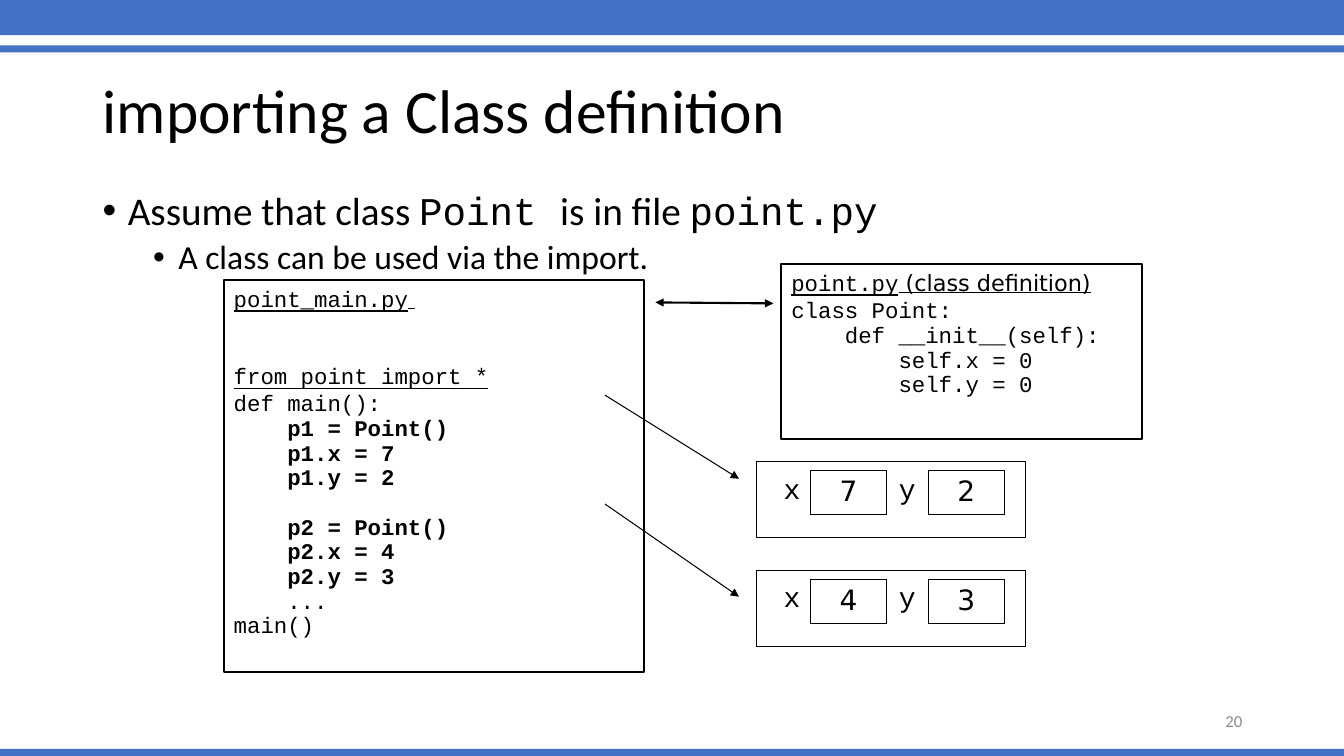
from pptx import Presentation
from pptx.dml.color import RGBColor
from pptx.enum.shapes import MSO_CONNECTOR, MSO_SHAPE
from pptx.enum.text import MSO_ANCHOR, MSO_AUTO_SIZE, PP_ALIGN
from pptx.oxml.ns import qn
from pptx.util import Emu, Pt
from lxml import etree

PX = 9144
TITLE_ONLY = 5
RECTANGLE = MSO_SHAPE.RECTANGLE
STRAIGHT = MSO_CONNECTOR.STRAIGHT
TOP, MIDDLE = MSO_ANCHOR.TOP, MSO_ANCHOR.MIDDLE
NO_AUTOFIT = MSO_AUTO_SIZE.NONE
LEFT, CENTER, RIGHT = PP_ALIGN.LEFT, PP_ALIGN.CENTER, PP_ALIGN.RIGHT

BLUE = RGBColor(0x44, 0x72, 0xC4)
BLACK = RGBColor(0, 0, 0)
GRAY = RGBColor(0x8C, 0x8C, 0x8C)

SANS, MONO, WIDE = "Calibri", "Courier New", "DejaVu Sans"
CODE_SIZE = 16
CODE_PITCH = 17.6

MAIN_CODE = [
    "def main():",
    "    p1 = Point()",
    "    p1.x = 7",
    "    p1.y = 2",
    "    p2 = Point()",
    "    p2.x = 4",
    "    p2.y = 3",
    "    ...",
    "main()",
]
CLASS_CODE = [
    "class Point:",
    "    def __init__(self):",
    "        self.x = 0",
    "        self.y = 0",
]


def px(*lengths):
    return [Emu(length * PX) for length in lengths]


def add_run(paragraph, text, font, size, color=BLACK, bold=False, underline=False):
    run = paragraph.add_run()
    run.text = text
    run.font.name = font
    run.font.size = Pt(size)
    run.font.color.rgb = color
    run.font.bold = bold
    run.font.underline = underline


def next_paragraph(frame):
    first = frame.paragraphs[0]
    return first if not first.runs else frame.add_paragraph()


def add_bar(slide, top, height):
    bar = slide.shapes.add_shape(RECTANGLE, *px(0, top, 1333, height))
    bar.shadow.inherit = False
    bar.fill.solid()
    bar.fill.fore_color.rgb = BLUE
    bar.line.fill.background()


def add_frame(slide, box, weight):
    outline = slide.shapes.add_shape(RECTANGLE, *px(*box))
    outline.shadow.inherit = False
    outline.fill.background()
    outline.line.color.rgb = BLACK
    outline.line.width = Pt(weight)
    return outline


def add_text_box(slide, box, anchor):
    frame = slide.shapes.add_textbox(*px(*box)).text_frame
    frame.word_wrap = True
    frame.vertical_anchor = anchor
    return frame


def set_title(slide, text):
    title = slide.shapes.title
    title.left, title.top, title.width, title.height = px(92, 40, 1150, 145)
    frame = title.text_frame
    frame.auto_size = NO_AUTOFIT
    frame.vertical_anchor = MIDDLE
    heading = frame.paragraphs[0]
    heading.alignment = LEFT
    heading.line_spacing = 0.9
    add_run(heading, text, SANS, 44)


def add_bullet(frame, pieces, size, indent, before):
    bullet = next_paragraph(frame)
    bullet.line_spacing = 0.9
    bullet.space_before = Pt(before)
    properties = bullet._p.get_or_add_pPr()
    properties.set("marL", str(indent * PX))
    properties.set("indent", str(-25 * PX))
    etree.SubElement(properties, qn("a:buFont"), typeface="Arial")
    etree.SubElement(properties, qn("a:buChar"), char="•")
    for text, font in pieces:
        add_run(bullet, text, font, size)


def add_listing(slide, box, heading):
    frame = add_frame(slide, box, 1.5).text_frame
    frame.word_wrap = True
    frame.vertical_anchor = TOP
    for text, font in heading:
        add_underlined(frame, text, font)
    return frame


def add_underlined(frame, text, font, paragraph=None):
    line = paragraph or frame.paragraphs[0]
    line.alignment = LEFT
    add_run(line, text, font, CODE_SIZE, underline=True)


def add_code(frame, lines, first_gap):
    for number, text in enumerate(lines):
        line = frame.add_paragraph()
        line.alignment = LEFT
        line.line_spacing = Pt(CODE_PITCH)
        opens_block = text.strip().startswith("p2 =")
        gap = first_gap if number == 0 else CODE_PITCH if opens_block else 0
        line.space_before = Pt(gap)
        add_run(line, text, MONO, CODE_SIZE, bold=text.startswith("    p"))


def set_border(cell, side, visible):
    border = etree.SubElement(cell._tc.get_or_add_tcPr(), qn("a:ln" + side), w=str(Pt(1)))
    if visible:
        fill = etree.SubElement(border, qn("a:solidFill"))
        etree.SubElement(fill, qn("a:srgbClr"), val=str(BLACK))
    else:
        etree.SubElement(border, qn("a:noFill"))


def add_point(slide, top, x, y):
    add_frame(slide, (750, top, 267, 75), 0.75)
    fields = slide.shapes.add_table(1, 4, *px(767, top + 9, 229, 43)).table
    fields.first_row = False
    fields.horz_banding = False
    for column, width in enumerate(px(37, 75, 42, 75)):
        fields.columns[column].width = width
    for column, text in enumerate(["x", x, "y", y]):
        cell = fields.cell(0, column)
        is_value = column % 2 == 1
        for side in "LRTB":
            set_border(cell, side, is_value or side == "R" or (side == "L" and column > 0))
        cell.fill.background()
        content = cell.text_frame.paragraphs[0]
        content.alignment = CENTER
        add_run(content, text, WIDE if is_value else MONO, 20)


def add_arrow(slide, start, end, weight, both_ends=False):
    arrow = slide.shapes.add_connector(STRAIGHT, *px(*start, *end))
    arrow.line.color.rgb = BLACK
    arrow.line.width = Pt(weight)
    line = arrow.line._get_or_add_ln()
    for tip in ["headEnd", "tailEnd"] if both_ends else ["tailEnd"]:
        etree.SubElement(line, qn("a:" + tip), type="triangle")
    etree.SubElement(arrow._element.spPr, qn("a:effectLst"))


def main():
    deck = Presentation()
    deck.slide_width, deck.slide_height = px(1333, 750)
    slide = deck.slides.add_slide(deck.slide_layouts[TITLE_ONLY])

    for top, height in [(0, 35), (45, 7), (743, 7)]:
        add_bar(slide, top, height)
    set_title(slide, "importing a Class definition")

    body = add_text_box(slide, (92, 185, 1150, 537), TOP)
    assumption = [("Assume that class ", SANS), ("Point ", MONO),
                  ("is in file ", SANS), ("point.py", MONO)]
    add_bullet(body, assumption, 28, 25, 10)
    add_bullet(body, [("A class can be used via the import.", SANS)], 24, 75, 5)

    main_file = add_listing(slide, (222, 278, 417, 389),
                            [("point_main.py", MONO), (" ", WIDE)])
    import_line = main_file.add_paragraph()
    import_line.space_before = Pt(36)
    add_underlined(main_file, "from point import *", MONO, import_line)
    add_code(main_file, MAIN_CODE, 1.7)

    class_file = add_listing(slide, (775, 262, 358, 174),
                             [("point.py", MONO), (" (class definition)", WIDE)])
    add_code(class_file, CLASS_CODE, 2)

    add_point(slide, 458, "7", "2")
    add_point(slide, 566, "4", "3")

    add_arrow(slide, (650, 300), (767, 301), 1.5, both_ends=True)
    add_arrow(slide, (600, 392), (733, 475), 0.75)
    add_arrow(slide, (600, 500), (733, 592), 0.75)

    number = add_text_box(slide, (942, 695, 300, 40), MIDDLE).paragraphs[0]
    number.alignment = RIGHT
    add_run(number, "20", SANS, 12, GRAY)

    deck.save("out.pptx")


if __name__ == "__main__":
    main()
